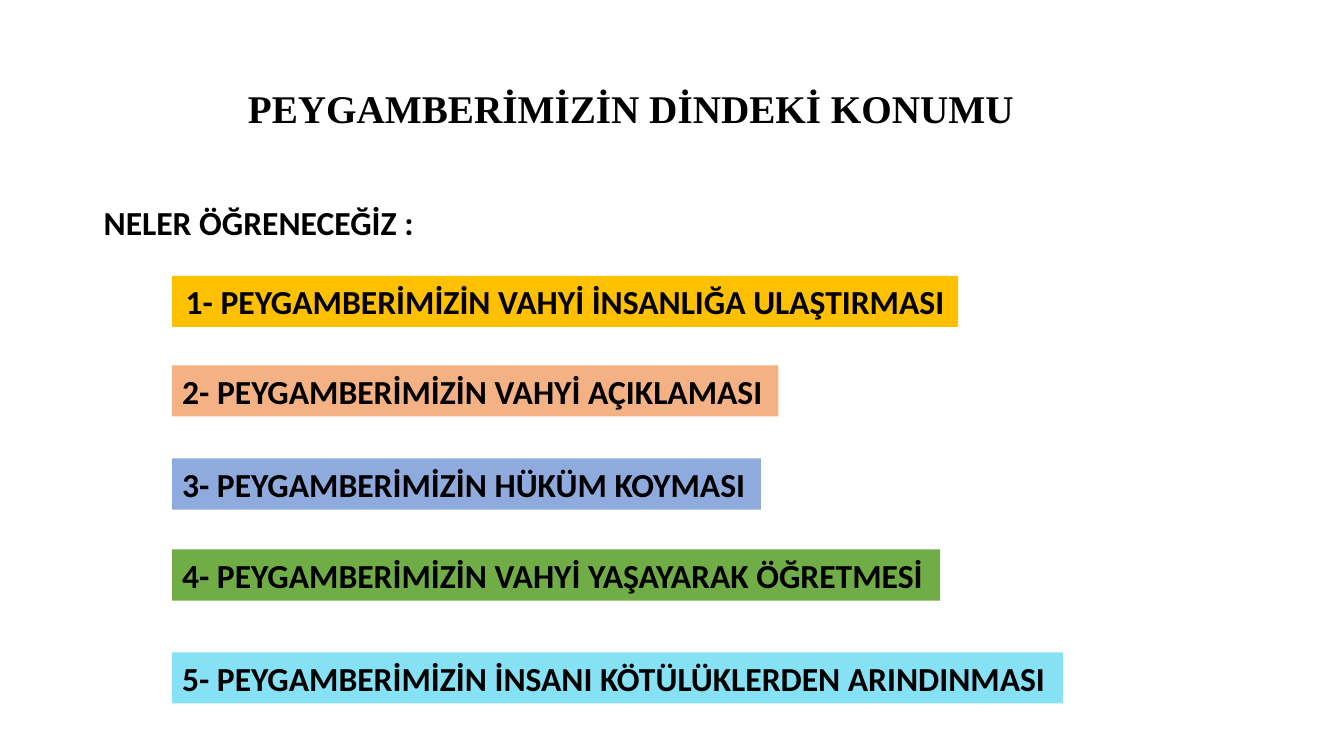
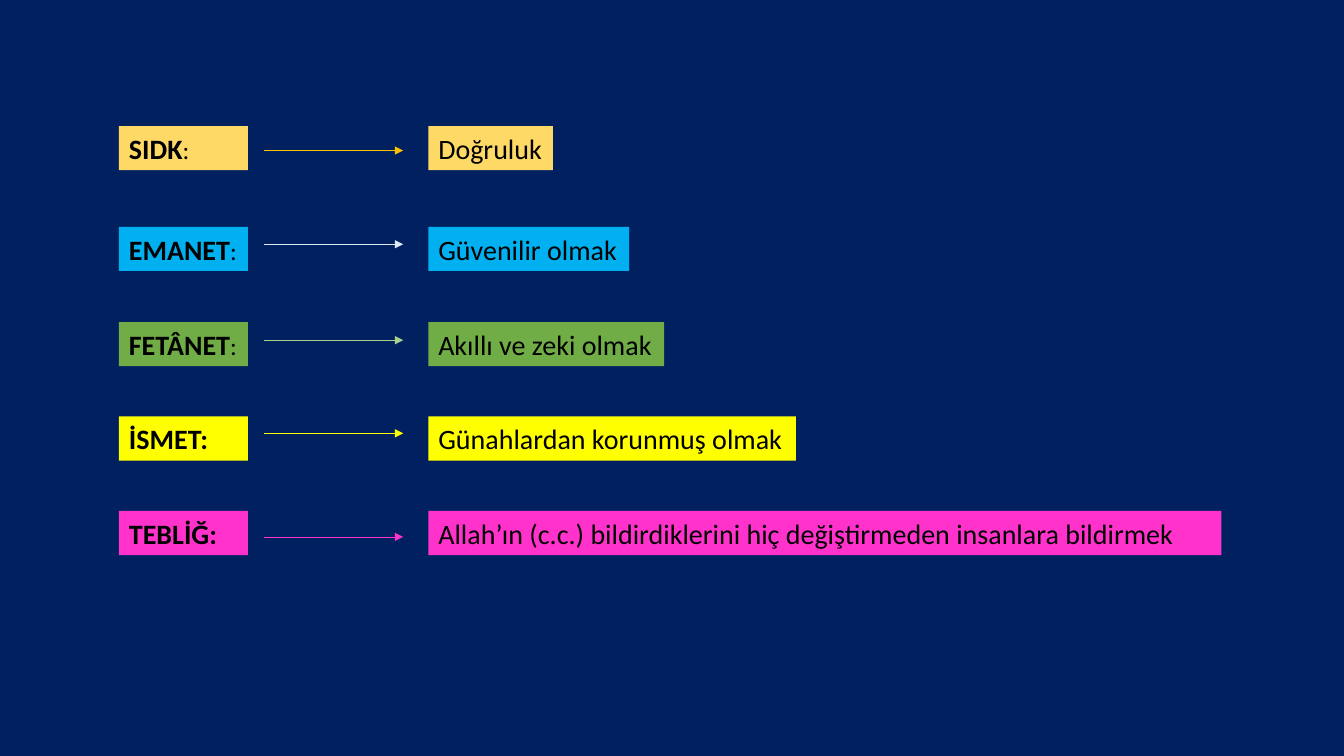
from dataclasses import dataclass

from lxml.etree import SubElement
from pptx import Presentation
from pptx.dml.color import RGBColor as RGB
from pptx.enum.shapes import MSO_CONNECTOR as Connector, MSO_SHAPE as Shape
from pptx.enum.text import MSO_ANCHOR as Anchor, PP_ALIGN as Align
from pptx.oxml.ns import qn
from pptx.util import Pt


@dataclass(frozen=True)
class Theme:
    heading_font: str = "Times New Roman"
    body_font: str = "Calibri"
    title_size: int = 28
    topic_size: int = 24
    term_size: int = 20
    colon_size: int = 18
    arrow_width: float = 0.5
    ink: str = "000000"
    white: str = "FFFFFF"
    navy: str = "002060"
    amber: str = "FFC000"
    peach: str = "F4B183"
    periwinkle: str = "8FAADC"
    green: str = "70AD47"
    aqua: str = "85E1F3"
    sand: str = "FFD966"
    sky: str = "00B0F0"
    ice: str = "DEEBF7"
    mint: str = "A9D18E"
    yellow: str = "FFFF00"
    pink: str = "FF33CC"


THEME = Theme()


class Deck:
    def __init__(self, theme):
        self.theme = theme
        self.deck = Presentation()
        self.deck.slide_width, self.deck.slide_height = Pt(960), Pt(540)
        self.page = None

    def new_page(self, background):
        self.page = self.deck.slides.add_slide(self.deck.slide_layouts[6])
        fill = self.page.background.fill
        fill.solid()
        fill.fore_color.rgb = RGB.from_string(background)

    def set_text(self, box, text, size, bold=False, font=None, align=Align.LEFT):
        """Fill the box with one paragraph and return that paragraph."""
        frame = box.text_frame
        frame.word_wrap = True
        if align == Align.LEFT:
            frame.margin_right = 0
        para = frame.paragraphs[0]
        para.alignment = align
        para.font.name = font or self.theme.body_font
        para.font.size = Pt(size)
        para.font.bold = bold
        para.font.color.rgb = RGB.from_string(self.theme.ink)
        para.add_run().text = text
        return para

    def text(self, left, top, width, height, text, size, font=None):
        box = self.page.shapes.add_textbox(Pt(left), Pt(top), Pt(width), Pt(height))
        self.set_text(box, text, size, True, font)

    def bar(self, left, top, width, height, color, text, size, bold=False, align=Align.LEFT):
        box = self.page.shapes.add_shape(
            Shape.RECTANGLE, Pt(left), Pt(top), Pt(width), Pt(height))
        box.shadow.inherit = False
        box.fill.solid()
        box.fill.fore_color.rgb = RGB.from_string(color)
        box.line.fill.background()
        box.text_frame.vertical_anchor = Anchor.MIDDLE
        return self.set_text(box, text, size, bold, align=align)

    def light_colon(self, para):
        span = para.add_run()
        span.text = ":"
        span.font.size = Pt(self.theme.colon_size)
        span.font.bold = False

    def arrow(self, left, right, y, color):
        arrow = self.page.shapes.add_connector(
            Connector.STRAIGHT, Pt(left), Pt(y), Pt(right), Pt(y))
        arrow.line.color.rgb = RGB.from_string(color)
        arrow.line.width = Pt(self.theme.arrow_width)
        properties = arrow._element.spPr
        SubElement(properties.find(qn("a:ln")), qn("a:tailEnd"), type="triangle")
        SubElement(properties, qn("a:effectLst"))


def topics_page(deck):
    theme = deck.theme
    deck.new_page(theme.white)
    deck.text(170, 57, 572, 41, "PEYGAMBERİMİZİN DİNDEKİ KONUMU",
              theme.title_size, theme.heading_font)
    deck.text(67, 140.5, 238, 36, "NELER ÖĞRENECEĞİZ :", theme.topic_size)
    topics = [
        (197, 561.5, theme.amber, "1- PEYGAMBERİMİZİN VAHYİ İNSANLIĞA ULAŞTIRMASI", Align.CENTER),
        (261, 433, theme.peach, "2- PEYGAMBERİMİZİN VAHYİ AÇIKLAMASI", Align.LEFT),
        (327.5, 420.5, theme.periwinkle, "3- PEYGAMBERİMİZİN HÜKÜM KOYMASI", Align.LEFT),
        (392.5, 548.5, theme.green, "4- PEYGAMBERİMİZİN VAHYİ YAŞAYARAK ÖĞRETMESİ", Align.LEFT),
        (466, 636.5, theme.aqua, "5- PEYGAMBERİMİZİN İNSANI KÖTÜLÜKLERDEN ARINDINMASI", Align.LEFT),
    ]
    for top, width, color, topic, align in topics:
        deck.bar(123, top, width, 36.5, color, topic, theme.topic_size, True, align)


def qualities_page(deck):
    theme = deck.theme
    deck.new_page(theme.navy)
    qualities = [
        (90, 107.5, theme.sand, theme.amber, "SIDK", True, 89, "Doğruluk"),
        (162, 174.5, theme.sky, theme.ice, "EMANET", True, 143.5, "Güvenilir olmak"),
        (230, 243, theme.green, theme.mint, "FETÂNET", True, 168.5, "Akıllı ve zeki olmak"),
        (297.5, 309.5, theme.yellow, theme.yellow, "İSMET:", False, 262.5,
         "Günahlardan korunmuş olmak"),
        (365, 383.5, theme.pink, theme.pink, "TEBLİĞ:", False, 566.5,
         "Allah’ın (c.c.) bildirdiklerini hiç değiştirmeden insanlara bildirmek"),
    ]
    for top, arrow_y, color, arrow_color, term, has_light_colon, width, meaning in qualities:
        para = deck.bar(85, top, 92, 31.5, color, term, theme.term_size, True)
        if has_light_colon:
            deck.light_colon(para)
        deck.bar(306, top, width, 31.5, color, meaning, theme.term_size)
        deck.arrow(188.5, 288, arrow_y, arrow_color)


def main():
    deck = Deck(THEME)
    topics_page(deck)
    qualities_page(deck)
    deck.deck.save("out.pptx")


if __name__ == "__main__":
    main()
